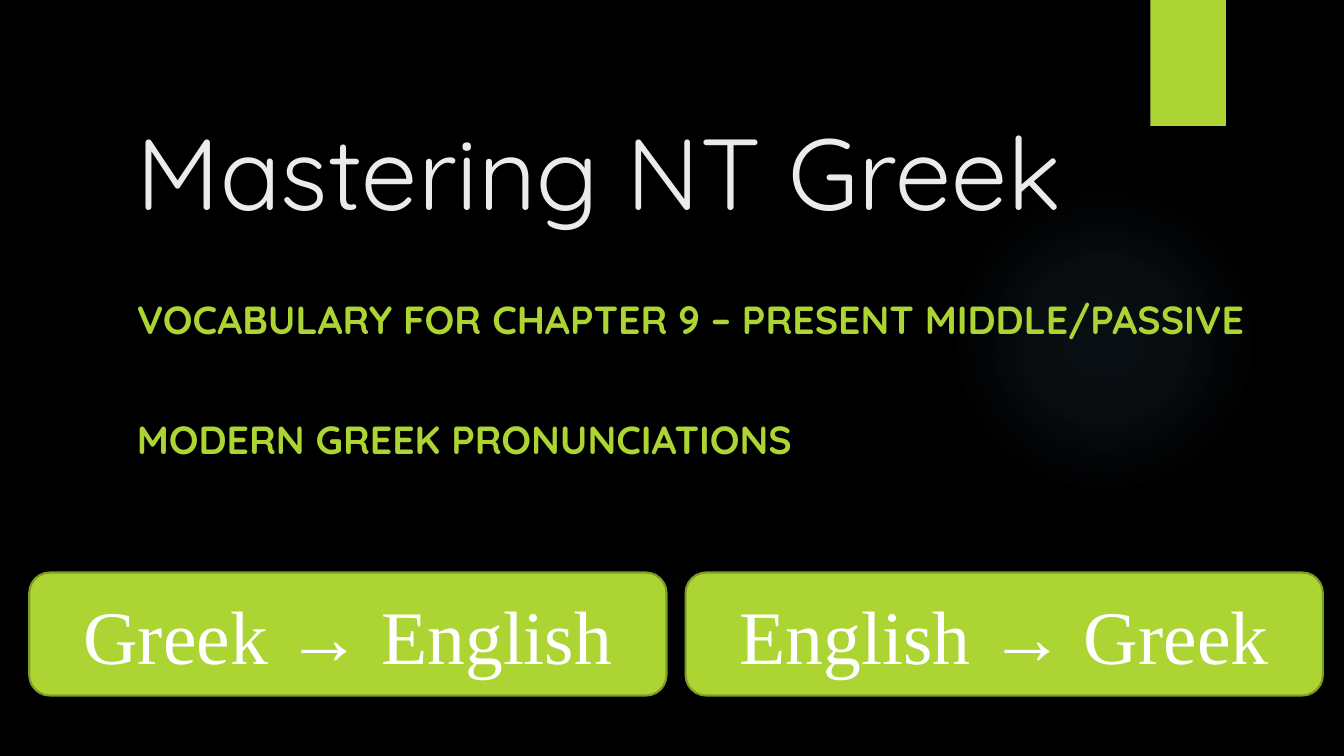
from lxml import etree
from pptx import Presentation
from pptx.dml.color import RGBColor
from pptx.enum.shapes import MSO_SHAPE
from pptx.enum.text import MSO_ANCHOR, PP_ALIGN
from pptx.oxml import parse_xml
from pptx.oxml.ns import nsdecls, qn
from pptx.util import Inches, Pt

BLACK = RGBColor(0x00, 0x00, 0x00)
WHITE = RGBColor(0xFF, 0xFF, 0xFF)
LIGHT_GREY = RGBColor(0xEB, 0xEB, 0xEB)
LIME = RGBColor(0xAC, 0xD4, 0x33)
DARK_LIME = RGBColor(0x7F, 0x9D, 0x26)
GLOW_BLUE = RGBColor(0x7A, 0xC4, 0xF0)

HEADING_FONT = "Quicksand"
BUTTON_FONT = "Times New Roman"
GLOW_STOPS = [(0, 7), (36, 6), (69, 0)]  # position and opacity, in percent


def add_plain_shape(slide, kind, left, top, width, height):
    shape = slide.shapes.add_shape(
        kind, Inches(left), Inches(top), Inches(width), Inches(height))
    shape.shadow.inherit = False
    shape.line.fill.background()
    return shape


def add_glow(slide, left, top, size):
    """Add a round, see-through light that fades outwards."""
    glow = add_plain_shape(slide, MSO_SHAPE.OVAL, left, top, size, size)
    stops = "".join(
        f'<a:gs pos="{position * 1000}"><a:srgbClr val="{GLOW_BLUE}">'
        f'<a:alpha val="{opacity * 1000}"/></a:srgbClr></a:gs>'
        for position, opacity in GLOW_STOPS)
    gradient = parse_xml(
        f'<a:gradFill {nsdecls("a")}><a:gsLst>{stops}</a:gsLst>'
        '<a:path path="circle"><a:fillToRect l="50000" t="50000" '
        'r="50000" b="50000"/></a:path></a:gradFill>')
    glow._element.spPr.find(qn("a:prstGeom")).addnext(gradient)


def add_ribbon(slide, left, top, width, height):
    ribbon = add_plain_shape(slide, MSO_SHAPE.RECTANGLE, left, top, width, height)
    ribbon.fill.solid()
    ribbon.fill.fore_color.rgb = LIME
    effects = ribbon._element.spPr.find(qn("a:effectLst"))
    shadow = etree.SubElement(
        effects, qn("a:outerShdw"), blurRad=str(Pt(3)), dist=str(Pt(2)),
        dir=str(90 * 60000), rotWithShape="0")
    color = etree.SubElement(shadow, qn("a:srgbClr"), val=str(BLACK))
    etree.SubElement(color, qn("a:alpha"), val="45000")


def write_lines(frame, lines, font_name, size, color, bold=False, gap=0):
    """Write one paragraph per line, with the gap in points between them."""
    frame.word_wrap = True
    for index, line in enumerate(lines):
        paragraph = frame.add_paragraph() if index else frame.paragraphs[0]
        paragraph.text = line
        if index:
            paragraph.space_before = Pt(gap)
        font = paragraph.font
        font.name, font.size, font.bold = font_name, Pt(size), bold
        font.color.rgb = color


def add_text_frame(slide, left, top, width, height):
    return slide.shapes.add_textbox(
        Inches(left), Inches(top), Inches(width), Inches(height)).text_frame


def add_title(slide, left, top, width, height):
    frame = add_text_frame(slide, left, top, width, height)
    frame.vertical_anchor = MSO_ANCHOR.BOTTOM
    frame.margin_bottom = 0
    write_lines(frame, ["Mastering NT Greek"], HEADING_FONT, 72, LIGHT_GREY)


def add_subtitle(slide, left, top, width, height):
    frame = add_text_frame(slide, left, top, width, height)
    lines = ["VOCABULARY FOR CHAPTER 9 – PRESENT MIDDLE/PASSIVE",
             "MODERN GREEK PRONUNCIATIONS"]
    write_lines(frame, lines, HEADING_FONT, 28, LIME, bold=True, gap=52)


def add_direction_buttons(slide, left, top, width, height, gap=0.19):
    labels = ["Greek → English", "English → Greek"]
    button_width = (width - gap) / len(labels)
    for index, label in enumerate(labels):
        button = add_plain_shape(
            slide, MSO_SHAPE.ROUNDED_RECTANGLE,
            left + index * (button_width + gap), top, button_width, height)
        button.fill.solid()
        button.fill.fore_color.rgb = LIME
        button.line.color.rgb = DARK_LIME
        button.line.width = Pt(1.5)
        frame = button.text_frame
        frame.vertical_anchor = MSO_ANCHOR.MIDDLE
        write_lines(frame, [label], BUTTON_FONT, 54, WHITE)
        frame.paragraphs[0].alignment = PP_ALIGN.CENTER


def main():
    presentation = Presentation()
    presentation.slide_width = Inches(13.33)
    presentation.slide_height = Inches(7.5)
    slide = presentation.slides.add_slide(presentation.slide_layouts[6])
    slide.background.fill.solid()
    slide.background.fill.fore_color.rgb = BLACK

    add_glow(slide, 9.41, 1.83, 3.08)
    add_ribbon(slide, 11.41, 0, 0.75, 1.25)
    add_title(slide, 1.26, 0.7, 10.04, 1.59)
    add_subtitle(slide, 1.26, 2.88, 11.46, 2.69)
    add_direction_buttons(slide, 0.29, 5.68, 12.83, 1.22)
    presentation.save("out.pptx")


if __name__ == "__main__":
    main()
